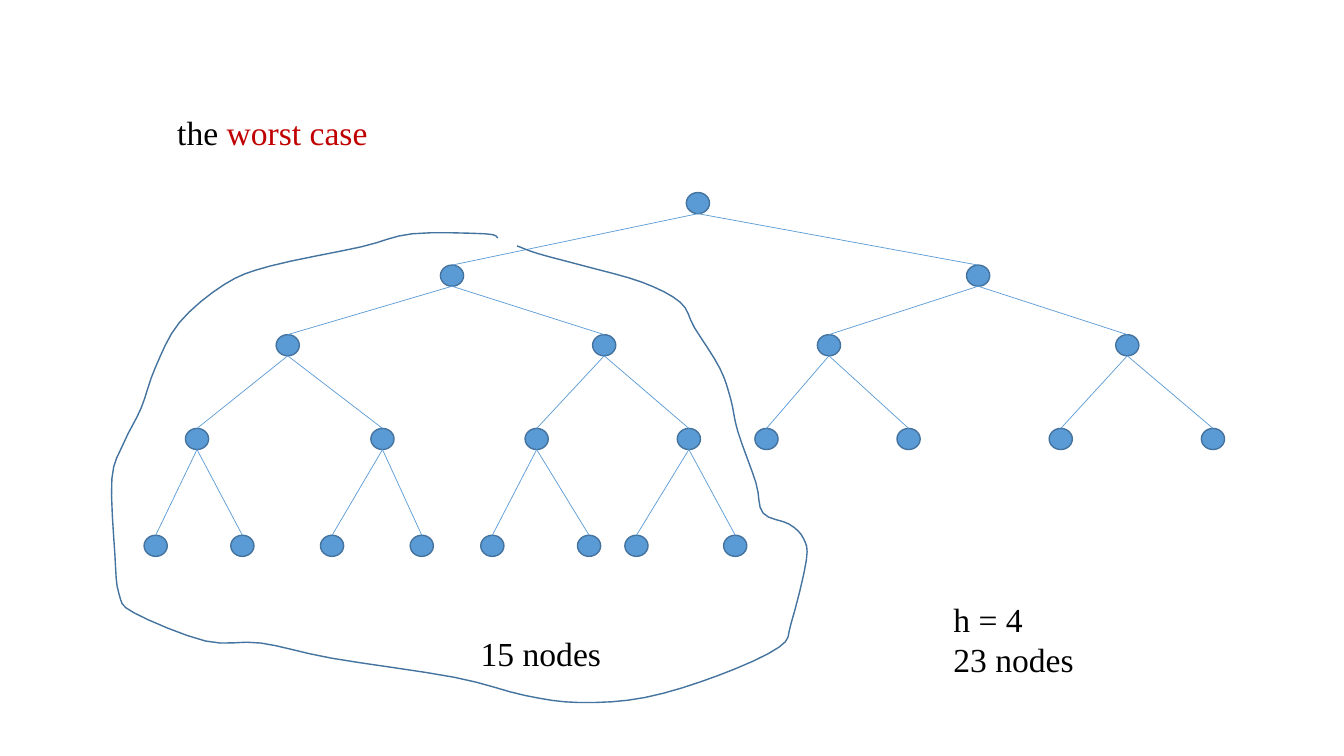
"""Builds a slide showing the worst-case shape of a heap with 23 nodes."""
from lxml import etree
from pptx import Presentation
from pptx import util as u
from pptx.dml.color import RGBColor
from pptx.enum import shapes, text
from pptx.oxml.ns import qn

COLORS = {"node": "5B9BD5", "outline": "43739E", "ink": "000000", "accent": "C00000"}
UNIT = 0.0254
NODE_W, NODE_H = 23, 21

LEVELS = [
    (191, [681]),
    (263, [437, 959]),
    (332, [274, 588, 811, 1107]),
    (425, [184, 368, 521, 672, 749, 890, 1041, 1192]),
    (531, [143, 229, 318, 407, 477, 573, 620, 718]),
]

SUBTREE_LOOP = [
    (494, 236), (481, 232), (409, 232), (358, 245), (268, 264), (223, 282),
    (178, 320), (154, 365), (140, 405), (123, 439), (111, 475), (114, 550),
    (118, 589), (133, 608), (204, 636), (259, 638), (329, 653), (451, 672),
    (521, 690), (575, 697), (640, 692), (713, 670), (773, 642), (785, 618),
    (800, 556), (797, 534), (783, 520), (757, 509), (750, 479), (732, 428),
    (725, 396), (714, 365), (689, 325), (675, 300), (637, 280), (580, 264),
    (535, 252), (513, 244),
]

LABELS = [
    ((467, 623, 154, 50), True, [[("15 nodes", "ink")]]),
    ((936, 589, 142, 91), True, [[("h = 4", "ink")], [("23 nodes", "ink")]]),
    ((166, 106, 219, 50), False, [[("the ", "ink"), ("worst case", "accent")]]),
]
FONT = {"name": "Times New Roman", "size": u.Pt(24)}


def scaled(*values):
    return [u.Cm(v * UNIT) for v in values]


def color(name):
    return RGBColor.from_string(COLORS[name])


def set_line(sp, name, width):
    sp.line.color.rgb = color(name)
    sp.line.width = u.Pt(width)


def add_node(s, x, y):
    sp = s.shapes.add_shape(shapes.MSO_SHAPE.OVAL, *scaled(x, y, NODE_W, NODE_H))
    sp.shadow.inherit = False
    sp.fill.solid()
    sp.fill.fore_color.rgb = color("node")
    set_line(sp, "outline", 1)


def add_edge(s, parent, child):
    half = NODE_W / 2
    ends = scaled(parent[0] + half, parent[1] + NODE_H, child[0] + half, child[1])
    sp = s.shapes.add_connector(shapes.MSO_CONNECTOR.STRAIGHT, *ends)
    set_line(sp, "node", 0.5)
    etree.SubElement(sp._element.spPr, qn("a:effectLst"))


def smooth(points, steps=4):
    """Return points on a Catmull-Rom curve through the given points."""
    padded = [points[0], *points, points[-1]]
    curve = [points[0]]
    for a, b, c, d in zip(padded, padded[1:], padded[2:], padded[3:]):
        for t in (k / steps for k in range(1, steps + 1)):
            curve.append(tuple(
                q + t / 2 * (r - p + t * (2 * p - 5 * q + 4 * r - w
                                          + t * (3 * (q - r) + w - p)))
                for p, q, r, w in zip(a, b, c, d)))
    return curve


def add_loop(s, points):
    start, *rest = [scaled(*point) for point in smooth(points)]
    builder = s.shapes.build_freeform(*start)
    builder.add_line_segments(rest, close=False)
    sp = builder.convert_to_shape()
    sp.shadow.inherit = False
    sp.fill.background()
    set_line(sp, "outline", 1)


def add_label(s, box, wrap, paragraphs):
    tf = s.shapes.add_textbox(*scaled(*box)).text_frame
    tf.word_wrap = wrap
    tf.auto_size = text.MSO_AUTO_SIZE.SHAPE_TO_FIT_TEXT
    for i, runs in enumerate(paragraphs):
        p = tf.add_paragraph() if i else tf.paragraphs[0]
        for words, name in runs:
            r = p.add_run()
            r.text = words
            r.font.color.rgb = color(name)
            for key, value in FONT.items():
                setattr(r.font, key, value)


def main():
    prs = Presentation()
    prs.slide_width, prs.slide_height = u.Cm(33.87), u.Cm(19.05)
    s = prs.slides.add_slide(prs.slide_layouts[6])
    nodes = [(x, y) for y, lefts in LEVELS for x in lefts]
    for node in nodes:
        add_node(s, *node)
    for i, child in enumerate(nodes[1:]):
        add_edge(s, nodes[i // 2], child)
    add_loop(s, SUBTREE_LOOP)
    for label in LABELS:
        add_label(s, *label)
    prs.save("out.pptx")


if __name__ == "__main__":
    main()
